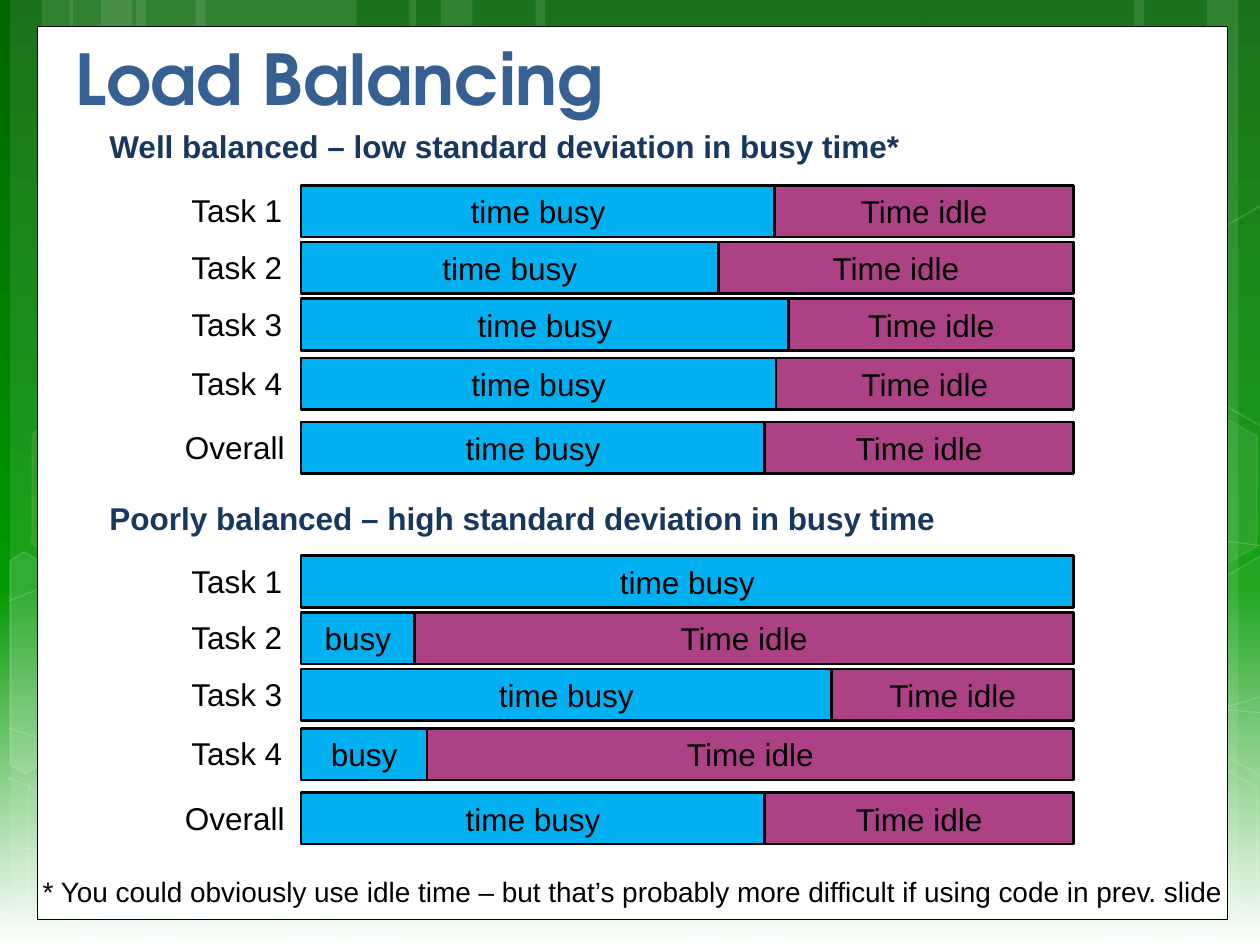
from lxml.etree import SubElement
from pptx import Presentation
from pptx.dml.color import RGBColor
from pptx.enum.shapes import MSO_SHAPE
from pptx.enum.text import MSO_ANCHOR, MSO_AUTO_SIZE, PP_ALIGN
from pptx.oxml.ns import qn
from pptx.util import Inches, Pt

COLORS = {
    "white": "FFFFFF", "black": "000000", "title": "376092", "heading": "17375E",
    "busy": "00B0F0", "idle": "AD4186", "dark": "006400", "green": "009900",
}


def paint(sp, fill=None, line=None, width=1, fill_alpha=100, line_alpha=100):
    """Set a shape's fill and outline, with opacity in percent."""
    sp.shadow.inherit = False
    alphas = []
    if fill:
        sp.fill.solid()
        sp.fill.fore_color.rgb = RGBColor.from_string(COLORS[fill])
        alphas.append(fill_alpha)
    else:
        sp.fill.background()
    if line:
        sp.line.color.rgb = RGBColor.from_string(COLORS[line])
        sp.line.width = Pt(width)
        alphas.append(line_alpha)
    else:
        sp.line.fill.background()
    colors = sp.element.spPr.iter(qn("a:srgbClr"))
    for color, alpha in zip(list(colors), alphas):
        if alpha < 100:
            SubElement(color, qn("a:alpha"), val=str(alpha * 1000))


def write(sp, text, size=18, font="Arial", color="black", bold=False,
          align=PP_ALIGN.LEFT, anchor=MSO_ANCHOR.TOP, wrap=False):
    """Put one formatted line of text into a shape or text box."""
    tf = sp.text_frame
    tf.auto_size = MSO_AUTO_SIZE.NONE if wrap else MSO_AUTO_SIZE.SHAPE_TO_FIT_TEXT
    tf.word_wrap = wrap
    tf.vertical_anchor = anchor
    p = tf.paragraphs[0]
    p.alignment = align
    r = p.add_run()
    r.text = text
    r.font.size = Pt(size)
    r.font.name = font
    r.font.bold = bold
    r.font.color.rgb = RGBColor.from_string(COLORS[color])


prs = Presentation()
prs.slide_width, prs.slide_height = Inches(10), Inches(7.5)
s = prs.slides.add_slide(prs.slide_layouts[6])
shapes = s.shapes

# Background gradient, top to bottom
bg = s.background.fill
bg.gradient()
bg.gradient_angle = 270
stops = s.element.find(".//" + qn("a:gsLst"))
for stop in list(stops):
    stops.remove(stop)
for pos, name in ((0, "dark"), (62, "green"), (100, "white")):
    stop = SubElement(stops, qn("a:gs"), pos=str(pos * 1000))
    SubElement(stop, qn("a:srgbClr"), val=COLORS[name])

# Translucent vertical strips
strips = [(1.08, 1.75), (0.08, 0.5), (0.33, 0.83), (1.55, 1.75), (0.55, 0.5),
          (0.8, 0.83), (7.33, 1.75), (9.58, 0.5), (9, 0.83), (4.25, 3.08),
          (3.25, 0.5), (3.5, 0.83)]
for left, width in strips:
    strip = shapes.add_shape(MSO_SHAPE.RECTANGLE, Inches(left), 0,
                             Inches(width), Inches(7.5))
    paint(strip, fill="white", fill_alpha=10)

# Faint sweeping lines: points, closed, fill opacity, line width, line opacity
outlines = [
    ([(0.07, 6.73), (1.9, 6.78), (4.58, 6.65), (7.92, 6.17), (10.07, 5.51)], False, 0, 0.5, 20),
    ([(0.07, 4.77), (1.21, 4.31), (3.47, 3.87), (6.54, 3.87), (10.07, 4.34)], False, 0, 0.5, 20),
    ([(0.06, 6.17), (1.8, 6.94), (3.34, 7.49)], False, 0, 0.5, 20),
    ([(0.07, 5.78), (1.28, 6.16), (3.57, 6.73), (6.28, 7.18), (8.53, 7.36),
      (9.45, 7.38), (10.07, 7.34)], False, 0, 0.5, 20),
    ([(2.42, 7.49), (3.02, 6.91), (3.88, 6.39), (4.7, 6.09), (6.08, 5.78),
      (7.94, 5.62), (9.53, 5.62), (10.06, 5.66)], False, 0, 0.5, 20),
    ([(0.08, 4.45), (0.19, 4.38), (0.96, 4.82), (0.95, 5.7), (0.2, 6.14),
      (0.08, 6.07)], True, 10, 1, 12),
    ([(9.26, 4.85), (10.01, 4.41), (10.09, 4.46), (10.09, 6.13), (10.02, 6.17),
      (9.26, 5.73)], True, 4, 1, 12),
    ([(9.26, 2.07), (10.01, 1.63), (10.1, 1.68), (10.09, 3.35), (10.02, 3.39),
      (9.26, 2.95)], True, 0, 1, 12),
]
for points, closed, fill_alpha, width, line_alpha in outlines:
    points = [(Inches(x), Inches(y)) for x, y in points]
    builder = shapes.build_freeform(*points[0])
    builder.add_line_segments(points[1:], close=closed)
    paint(builder.convert_to_shape(), fill="white" if fill_alpha else None, line="white",
          width=width, fill_alpha=fill_alpha, line_alpha=line_alpha)

# Hexagons: left, top, fill opacity, line opacity
hexagons = [(4.97, 5.89, 6, 12), (0.11, 5.91, 0, 12), (0.14, 3.12, 7, 8),
            (1.74, 5.92, 0, 12), (8.34, 5.93, 0, 12), (8.34, 3.14, 7, 8)]
for left, top, fill_alpha, line_alpha in hexagons:
    hexagon = shapes.add_shape(MSO_SHAPE.HEXAGON, Inches(left), Inches(top),
                               Inches(1.75), Inches(1.52))
    hexagon.adjustments[0] = 0.285
    hexagon.rotation = 30
    paint(hexagon, fill="white" if fill_alpha else None, line="white",
          fill_alpha=fill_alpha, line_alpha=line_alpha)

panel = shapes.add_shape(MSO_SHAPE.RECTANGLE, Inches(0.3), Inches(0.21),
                         Inches(9.44), Inches(7.09))
paint(panel, fill="white", line="black", width=0.5)

title = shapes.add_textbox(Inches(0.5), Inches(-0.04), Inches(9.17), Inches(1.04))
write(title, "Load Balancing", size=40, font="TeX Gyre Adventor", color="title",
      bold=True, anchor=MSO_ANCHOR.BOTTOM, wrap=True)

# Each group: heading, its top and width, top of the bars, busy widths
BAR_LEFT, BAR_WIDTH, BAR_HEIGHT = 2.39, 6.13, 0.41
rows = [("Task 1", 0), ("Task 2", 0.45), ("Task 3", 0.9), ("Task 4", 1.37), ("Overall", 1.88)]
groups = [
    ("Well balanced – low standard deviation in busy time*", 0.96, 6.54, 1.47,
     [3.76, 3.31, 3.87, 3.77, 3.68]),
    ("Poorly balanced – high standard deviation in busy time", 3.91, 6.82, 4.41,
     [BAR_WIDTH, 0.9, 4.21, 1, 3.68]),
]
for heading, heading_top, heading_width, bars_top, busy_widths in groups:
    box = shapes.add_textbox(Inches(0.77), Inches(heading_top),
                             Inches(heading_width), Inches(0.4))
    write(box, heading, color="heading", bold=True)
    for (name, offset), busy in zip(rows, busy_widths):
        top = Inches(bars_top + offset)
        left, width = (1.37, 1) if name == "Overall" else (1.42, 0.93)
        label = shapes.add_textbox(Inches(left), top, Inches(width), Inches(0.4))
        write(label, name)
        bars = [("idle", "Time idle", BAR_LEFT + busy, BAR_WIDTH - busy),
                ("busy", "time busy" if busy > 1 else "busy", BAR_LEFT, busy)]
        for color, text, left, width in bars:
            if width > 0:
                bar = shapes.add_shape(MSO_SHAPE.RECTANGLE, Inches(left), top,
                                       Inches(width), Inches(BAR_HEIGHT))
                paint(bar, fill=color, line="black", width=1.5)
                write(bar, text, align=PP_ALIGN.CENTER, anchor=MSO_ANCHOR.MIDDLE, wrap=True)

footnote = shapes.add_textbox(Inches(0.24), Inches(6.89), Inches(9.68), Inches(0.37))
write(footnote, "* You could obviously use idle time – but that’s probably more "
      "difficult if using code in prev. slide", size=16)

prs.save("out.pptx")
